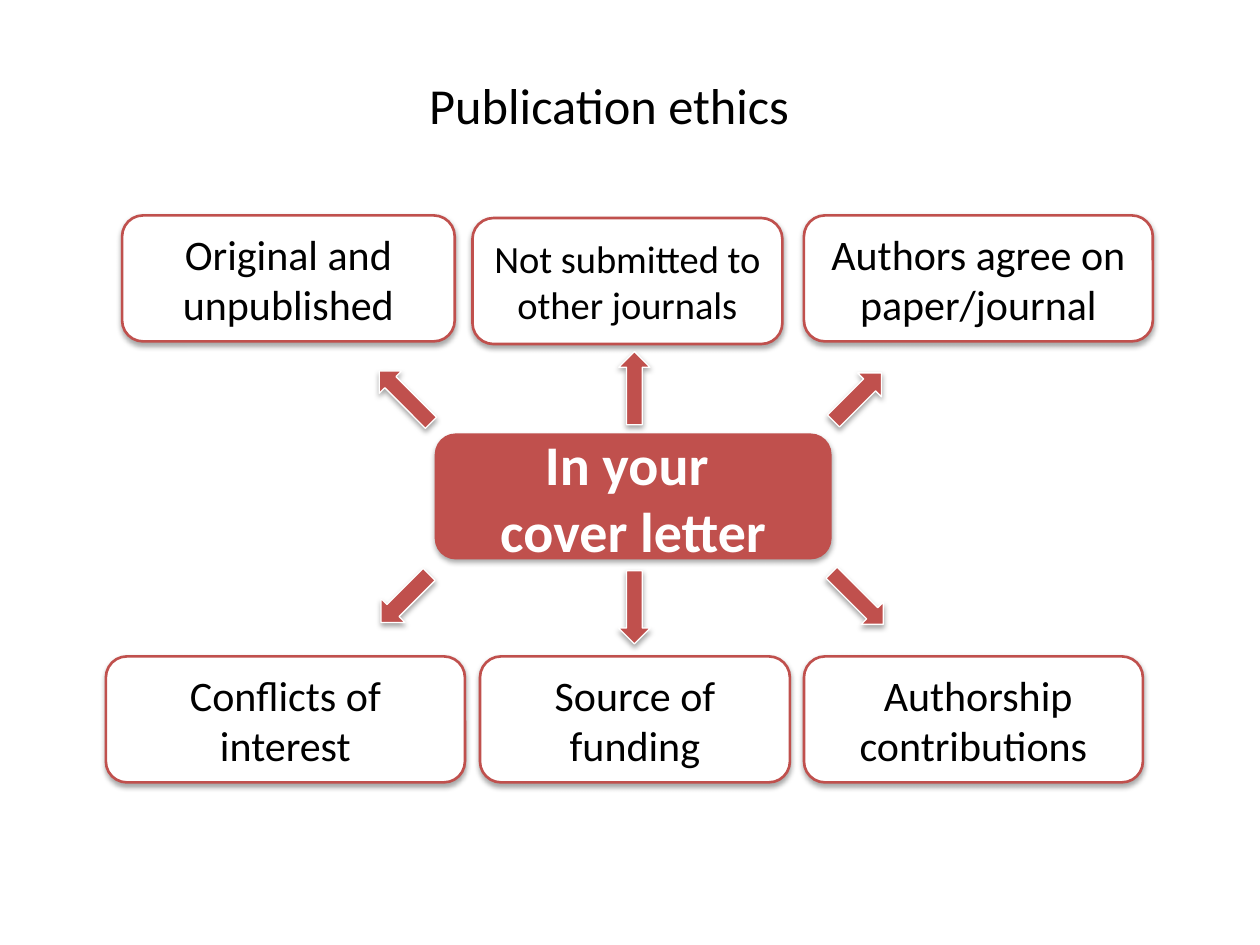
from dataclasses import dataclass

from lxml import etree
from pptx import Presentation
from pptx.dml.color import RGBColor
from pptx.enum.shapes import MSO_SHAPE
from pptx.enum.text import MSO_ANCHOR, PP_ALIGN
from pptx.oxml.ns import qn
from pptx.util import Pt

ROUNDED = MSO_SHAPE.ROUNDED_RECTANGLE
ARROW = MSO_SHAPE.DOWN_ARROW
CENTER = PP_ALIGN.CENTER
MIDDLE = MSO_ANCHOR.MIDDLE

FONT = "Calibri"
RED = "C0504D"
WHITE = "FFFFFF"
BLACK = "000000"
BOX_HEIGHT = 72
TOP_ROW = 123.1
BOTTOM_ROW = 375.1


@dataclass
class Box:
    left: float
    top: float
    width: float
    lines: tuple[str, ...]
    size: float = 24
    bold: bool = False
    fill: str = WHITE
    outline: str | None = RED
    ink: str = BLACK


@dataclass
class Arrow:
    center_x: float
    center_y: float
    rotation: int
    width: float = 18
    height: float = 41.8


STATEMENTS = [
    Box(270, 124.6, 177.1, ("Not submitted to other journals",), size=22),
    Box(274.3, BOTTOM_ROW, 177.1, ("Source of funding",)),
    Box(459.4, TOP_ROW, 199.4, ("Authors agree on paper/journal",)),
    Box(69.8, TOP_ROW, 190.1, ("Original and unpublished",)),
    Box(60.5, BOTTOM_ROW, 205.2, ("Conflicts of interest",)),
    Box(459.4, BOTTOM_ROW, 193.7, (" Authorship contributions",)),
]
COVER_LETTER = Box(248.4, 247.7, 226.8, ("In your ", "cover letter"),
                   size=32, bold=True, fill=RED, outline=None, ink=WHITE)
ARROWS = [
    Arrow(362.5, 221.8, 180),
    Arrow(362.5, 347, 0),
    Arrow(490, 226.8, 225, 19.4, 38.9),
    Arrow(231.5, 226.8, 135),
    Arrow(231.5, 342, 45, 19.4, 38.9),
    Arrow(490, 342, 315),
]


def rgb(color: str) -> RGBColor:
    return RGBColor.from_string(color)


def add_shadow(shape) -> None:
    shape.shadow.inherit = False
    effects = shape._element.spPr.find(qn("a:effectLst"))
    shadow = etree.SubElement(
        effects, qn("a:outerShdw"), blurRad=str(Pt(3.1)), dist=str(Pt(1.8)),
        dir="5400000", rotWithShape="0")
    color = etree.SubElement(shadow, qn("a:srgbClr"), val=BLACK)
    etree.SubElement(color, qn("a:alpha"), val="35000")


def write(frame, lines: tuple[str, ...], size: float, color: str,
          bold: bool = False) -> None:
    frame.word_wrap = True
    frame.vertical_anchor = MIDDLE
    frame.text = "\n".join(lines)
    for paragraph in frame.paragraphs:
        paragraph.alignment = CENTER
        paragraph.font.name = FONT
        paragraph.font.size = Pt(size)
        paragraph.font.bold = bold
        paragraph.font.color.rgb = rgb(color)


def style(shape, fill: str, outline: str | None, weight: float) -> None:
    shape.fill.solid()
    shape.fill.fore_color.rgb = rgb(fill)
    if outline:
        shape.line.color.rgb = rgb(outline)
        shape.line.width = Pt(weight)
    else:
        shape.line.fill.background()
    add_shadow(shape)


def draw_box(slide, box: Box) -> None:
    shape = slide.shapes.add_shape(
        ROUNDED, Pt(box.left), Pt(box.top), Pt(box.width), Pt(BOX_HEIGHT))
    style(shape, box.fill, box.outline, 1.5)
    write(shape.text_frame, box.lines, box.size, box.ink, box.bold)


def draw_arrow(slide, arrow: Arrow) -> None:
    shape = slide.shapes.add_shape(
        ARROW, Pt(arrow.center_x - arrow.width / 2),
        Pt(arrow.center_y - arrow.height / 2),
        Pt(arrow.width), Pt(arrow.height))
    shape.rotation = arrow.rotation
    style(shape, RED, WHITE, 0.75)


def main() -> None:
    deck = Presentation()
    deck.slide_width, deck.slide_height = Pt(720), Pt(540)
    slide = deck.slides.add_slide(deck.slide_layouts[5])

    title = slide.shapes.title
    title.left, title.top = Pt(42.5), Pt(44.6)
    title.width, title.height = Pt(611.3), Pt(29.5)
    write(title.text_frame, ("Publication ethics",), 28.8, BLACK)

    for box in [COVER_LETTER, *STATEMENTS]:
        draw_box(slide, box)
    for arrow in ARROWS:
        draw_arrow(slide, arrow)

    deck.save("out.pptx")


if __name__ == "__main__":
    main()
